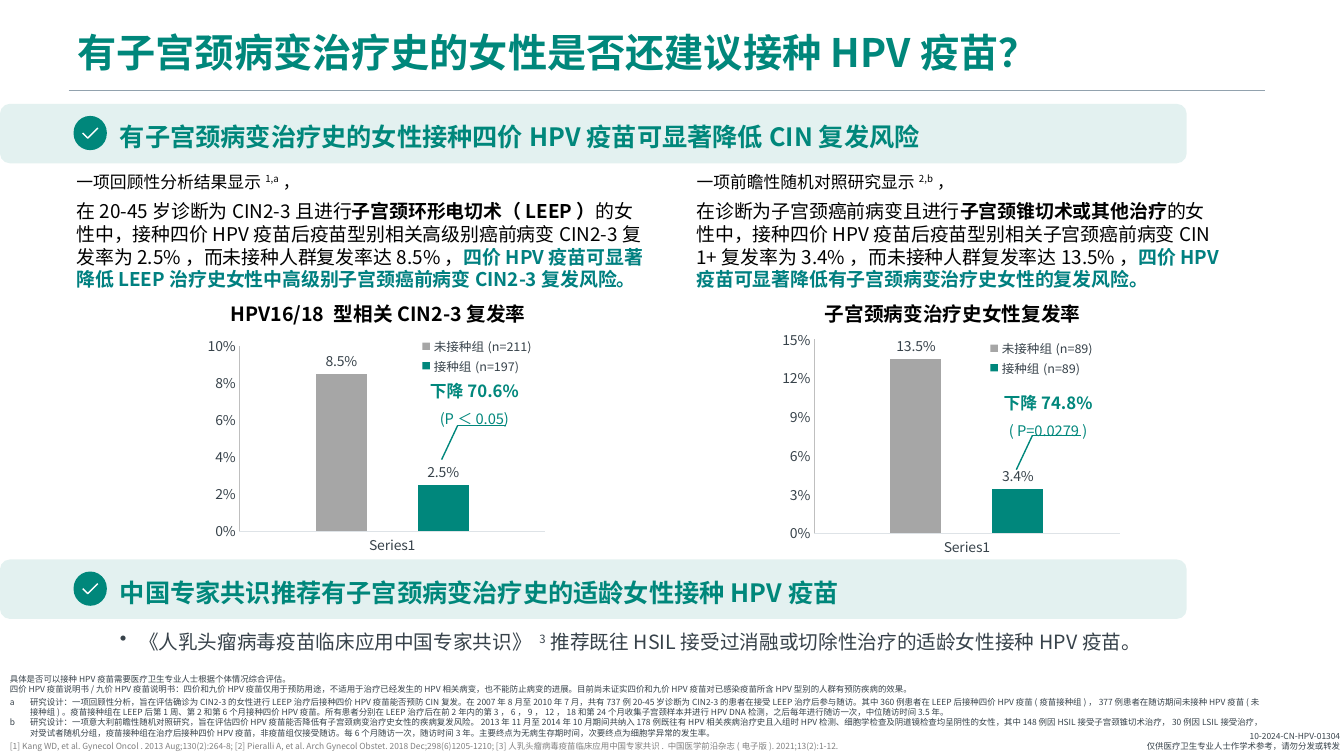
from dataclasses import dataclass

from lxml import etree
from pptx import Presentation
from pptx import util as u
from pptx.chart.data import CategoryChartData
from pptx.dml.color import RGBColor
from pptx.enum import chart as charts, shapes, text
from pptx.oxml.ns import qn


@dataclass(frozen=True)
class Theme:
    """Colours, type sizes and font of the slide."""
    font: str = "Noto Sans CJK SC"
    green: str = "00877B"
    bar_green: str = "00877C"
    teal: str = "008080"
    bar_gray: str = "A6A6A6"
    ink: str = "37424A"
    black: str = "000000"
    white: str = "FFFFFF"
    gray: str = "808080"
    rule: str = "92A2AE"
    value_line: str = "BFBFBF"
    category_line: str = "DEE3E7"
    title: float = 28
    heading: float = 18
    subheading: float = 14
    body: float = 13.5
    lead: float = 12
    detail: float = 10.5
    axis: float = 10
    legend: float = 9
    note: float = 6


class StudySlide:
    """Draws styled elements on one page."""

    def __init__(self, page, theme):
        self.page, self.theme = page, theme

    def style(self, font, size, color, bold=False):
        font.name, font.size, font.bold = self.theme.font, u.Pt(size), bold
        font.color.rgb = RGBColor.from_string(color)
        etree.SubElement(font._element, qn("a:ea"), typeface=self.theme.font)

    def box(self, left, top, width, height):
        frame = self.page.shapes.add_textbox(*map(u.Inches, (left, top, width, height))).text_frame
        frame.word_wrap = True
        return frame

    def para(self, frame, spans, size, color, bold=False, align=None, spacing=None, before=None, indent=0, bullet=None):
        para = frame.paragraphs[0]
        if para.runs:
            para = frame.add_paragraph()
        if align:
            para.alignment = align
        if spacing:
            para.line_spacing = spacing
        if before:
            para.space_before = u.Pt(before)
        if indent:
            properties = para._p.get_or_add_pPr()
            properties.set("marL", str(u.Inches(indent)))
            properties.set("indent", str(-u.Inches(indent)))
            if bullet:
                etree.SubElement(properties, qn("a:buChar"), char=bullet)
        self.style(para.font, size, color, bold)
        for words, kind in [(spans, "")] if isinstance(spans, str) else spans:
            span = para.add_run()
            span.text = words
            if kind == "raised":
                span._r.get_or_add_rPr().set("baseline", "30000")
            elif kind:
                span.font.bold = True
            if kind == "accent":
                span.font.color.rgb = RGBColor.from_string(self.theme.teal)

    def line(self, start, end, color, width):
        ends = map(u.Inches, (*start, *end))
        line = self.page.shapes.add_connector(shapes.MSO_CONNECTOR.STRAIGHT, *ends)
        line.line.color.rgb = RGBColor.from_string(color)
        line.line.width = u.Pt(width)
        etree.SubElement(line._element.spPr, qn("a:effectLst"))

    def fill(self, shape, color):
        shape.shadow.inherit = False
        shape.fill.solid()
        shape.fill.fore_color.rgb = RGBColor.from_string(color)
        shape.line.fill.background()

    def rounded(self, left, top, width, height, color):
        place = map(u.Inches, (left, top, width, height))
        shape = self.page.shapes.add_shape(shapes.MSO_SHAPE.ROUNDED_RECTANGLE, *place)
        self.fill(shape, color)
        return shape

    def banner(self, top, heading):
        theme = self.theme
        band = self.rounded(0, top, 11.77, 0.59, theme.green)
        tint = band._element.spPr.find(f"{qn('a:solidFill')}/{qn('a:srgbClr')}")
        etree.SubElement(tint, qn("a:alpha"), val="11000")
        self.rounded(0.73, top + 0.12, 0.33, 0.34, theme.green).adjustments[0] = 0.5
        points = [(u.Inches(x), u.Inches(top + y)) for x, y in ((0.97, 0.24), (0.87, 0.34), (0.82, 0.29))]
        builder = self.page.shapes.build_freeform(*points[0])
        builder.add_line_segments(points[1:], close=False)
        tick = builder.convert_to_shape()
        self.fill(tick, theme.green)
        tick.line.color.rgb = RGBColor.from_string(theme.white)
        tick.line.width = u.Pt(1)
        self.para(self.box(1.09, top + 0.08, 10.15, 0.42), heading, theme.heading, theme.green, True, spacing=u.Pt(25))

    def layout(self, parts, inner=False):
        layout = etree.Element(qn("c:layout"))
        manual = etree.SubElement(layout, qn("c:manualLayout"))
        if inner:
            etree.SubElement(manual, qn("c:layoutTarget"), val="inner")
        for name in ("xMode", "yMode"):
            etree.SubElement(manual, qn(f"c:{name}"), val="edge")
        for name, value in zip("xywh", parts):
            etree.SubElement(manual, qn(f"c:{name}"), val=str(value))
        return layout

    def chart(self, left, top, groups, maximum, step, plot_area, legend_left):
        theme = self.theme
        data = CategoryChartData(number_format="0.0%")
        data.categories = ["Series1"]
        for name, rate in groups:
            data.add_series(name, [rate])
        place = map(u.Inches, (left, top, 3.38, 2.26))
        chart = self.page.shapes.add_chart(charts.XL_CHART_TYPE.COLUMN_CLUSTERED, *place, data).chart
        chart.has_title = False
        self.style(chart.font, theme.axis, theme.ink)
        values, categories = chart.value_axis, chart.category_axis
        values.maximum_scale, values.minimum_scale, values.major_unit = maximum, 0, step
        values.has_major_gridlines = False
        values.tick_labels.number_format, values.tick_labels.number_format_is_linked = "0%", False
        for axis, color in ((values, theme.value_line), (categories, theme.category_line)):
            axis.major_tick_mark = axis.minor_tick_mark = charts.XL_TICK_MARK.NONE
            axis.format.line.color.rgb = RGBColor.from_string(color)
            axis.format.line.width = u.Pt(0.75)
        plot = chart.plots[0]
        plot.gap_width, plot.overlap, plot.vary_by_categories = 300, -100, False
        plot.has_data_labels = True
        labels = plot.data_labels
        labels.show_value, labels.position = True, charts.XL_LABEL_POSITION.OUTSIDE_END
        labels.number_format, labels.number_format_is_linked = "0.0%", False
        self.style(labels.font, theme.axis, theme.ink)
        for series, color in zip(plot.series, (theme.bar_gray, theme.bar_green)):
            series.format.fill.solid()
            series.format.fill.fore_color.rgb = RGBColor.from_string(color)
        chart.has_legend = True
        legend = chart.legend
        legend.position, legend.include_in_layout = charts.XL_LEGEND_POSITION.RIGHT, False
        self.style(legend.font, theme.legend, theme.ink)
        legend._element.find(qn("c:overlay")).addprevious(self.layout((legend_left, 0.04, 0.38, 0.19)))
        area = chart._chartSpace.chart.plotArea
        for old in area.findall(qn("c:layout")):
            area.remove(old)
        area.insert(0, self.layout(plot_area, True))

    def study(self, left, width, lead, mark, findings):
        theme = self.theme
        frame = self.box(left, 1.65, width, 1.33)
        self.para(frame, [(lead, ""), (mark, "raised"), ("，", "")], theme.lead, theme.black)
        self.para(frame, findings, theme.body, theme.black, before=6)

    def chart_title(self, left, width, words):
        self.para(self.box(left, 2.95, width, 0.33), words, self.theme.subheading, self.theme.black, True, text.PP_ALIGN.CENTER)

    def callout(self, left, top, drop, chance, tip):
        theme = self.theme
        frame = self.box(left, top, 1.21, 0.6)
        for words, size, bold in ((drop, theme.lead, True), (chance, theme.detail, False)):
            self.para(frame, words, size, theme.bar_green, bold, text.PP_ALIGN.CENTER, u.Pt(18.8))
        x, y = tip
        bend = (x + 0.16, y - 0.34)
        self.line(tip, bend, theme.bar_green, 1)
        self.line(bend, (x + 0.64, y - 0.34), theme.bar_green, 1)

    def notes(self, place, paragraphs, color, indent=0, align=None):
        frame = self.box(*place)
        for words in paragraphs:
            self.para(frame, words, self.theme.note, color, align=align, indent=indent)


def main():
    """Build and save the slide."""
    deck = Presentation()
    deck.slide_width, deck.slide_height = u.Inches(13.33), u.Inches(7.5)
    theme = Theme()
    slide = StudySlide(deck.slides.add_slide(deck.slide_layouts[6]), theme)

    slide.line((0.68, 0.89), (12.55, 0.89), theme.rule, 0.25)
    title = slide.box(0.67, 0.2, 12.66, 0.69)
    title.vertical_anchor = text.MSO_ANCHOR.MIDDLE
    slide.para(title, "有子宫颈病变治疗史的女性是否还建议接种HPV疫苗？", theme.title, theme.green, True, spacing=0.9)

    slide.banner(1.03, "有子宫颈病变治疗史的女性接种四价HPV疫苗可显著降低CIN复发风险")
    slide.study(0.66, 5.83, "一项回顾性分析结果显示", "1,a", [
        ("在20-45岁诊断为CIN2-3且进行", ""), ("子宫颈环形电切术（LEEP）", "bold"),
        ("的女性中，接种四价HPV疫苗后疫苗型别相关高级别癌前病变CIN2-3复发率为2.5%，而未接种人群复发率达8.5%，", ""),
        ("四价HPV疫苗可显著降低LEEP治疗史女性中高级别子宫颈癌前病变CIN2-3复发风险。", "accent")])
    slide.study(6.81, 5.42, "一项前瞻性随机对照研究显示", "2,b", [
        ("在诊断为子宫颈癌前病变且进行", ""), ("子宫颈锥切术或其他治疗", "bold"),
        ("的女性中，接种四价HPV疫苗后疫苗型别相关子宫颈癌前病变CIN 1+复发率为3.4%，而未接种人群复发率达13.5%，", ""),
        ("四价HPV疫苗可显著降低有子宫颈病变治疗史女性的复发风险。", "accent")])

    slide.chart(2.06, 3.24, [("未接种组(n=211)", 0.085), ("接种组(n=197)", 0.025)], 0.1, 0.02, (0.09, 0.09, 0.9, 0.85), 0.6)
    slide.chart_title(2.15, 3.2, "HPV16/18 型相关CIN2-3复发率")
    slide.callout(4.1, 3.67, "下降70.6%", "(P＜0.05)", (4.38, 4.56))
    slide.chart(7.76, 3.26, [("未接种组(n=89)", 0.135), ("接种组(n=89)", 0.034)], 0.15, 0.03, (0.09, 0.05, 0.9, 0.89), 0.57)
    slide.chart_title(8.05, 2.8, "子宫颈病变治疗史女性复发率")
    slide.callout(9.79, 3.79, "下降74.8%", "( P=0.0279 )", (10.08, 4.66))

    slide.banner(5.55, "中国专家共识推荐有子宫颈病变治疗史的适龄女性接种HPV疫苗")
    slide.para(slide.box(1.09, 6.15, 10.29, 0.36), [
        ("《人乳头瘤病毒疫苗临床应用中国专家共识》", ""), (" 3", "raised"),
        ("推荐既往HSIL接受过消融或切除性治疗的适龄女性接种HPV疫苗。", "")],
        theme.subheading, theme.ink, spacing=1.2, indent=0.19, bullet="•")

    slide.notes((0, 6.64, 12.67, 0.3), [
        "具体是否可以接种HPV疫苗需要医疗卫生专业人士根据个体情况综合评估。",
        "四价HPV疫苗说明书/九价HPV疫苗说明书：四价和九价HPV疫苗仅用于预防用途，不适用于治疗已经发生的HPV相关病变，也不能防止病变的进展。目前尚未证实四价和九价HPV疫苗对已感染疫苗所含HPV型别的人群有预防疾病的效果。"], theme.ink, 0.2)
    slide.notes((0, 6.87, 12.67, 0.5), [
        "a \t研究设计：一项回顾性分析，旨在评估确诊为CIN2-3的女性进行LEEP治疗后接种四价HPV疫苗能否预防CIN复发。在2007年8月至2010年7月，共有737例20-45岁诊断为CIN2-3的患者在接受LEEP治疗后参与随访。其中360例患者在LEEP后接种四价HPV疫苗(疫苗接种组)，377例患者在随访期间未接种HPV疫苗(未接种组)。疫苗接种组在LEEP后第1周、第2和第6个月接种四价HPV疫苗。所有患者分别在LEEP治疗后在前2年内的第3，6，9，12，18和第24个月收集子宫颈样本并进行HPV DNA检测，之后每年进行随访一次，中位随访时间3.5年。",
        "b \t研究设计：一项意大利前瞻性随机对照研究，旨在评估四价HPV疫苗能否降低有子宫颈病变治疗史女性的疾病复发风险。2013年11月至2014年10月期间共纳入178例既往有HPV相关疾病治疗史且入组时HPV检测、细胞学检查及阴道镜检查均呈阴性的女性，其中148例因HSIL接受子宫颈锥切术治疗，30例因LSIL接受治疗，对受试者随机分组，疫苗接种组在治疗后接种四价HPV疫苗，非疫苗组仅接受随访。每6个月随访一次，随访时间3年。主要终点为无病生存期时间，次要终点为细胞学异常的发生率。"], theme.ink, 0.2)
    slide.notes((0, 7.3, 8.85, 0.2), [
        "[1] Kang WD, et al. Gynecol Oncol . 2013 Aug;130(2):264-8; [2] Pieralli A, et al. Arch Gynecol Obstet. 2018 Dec;298(6)1205-1210; [3]人乳头瘤病毒疫苗临床应用中国专家共识. 中国医学前沿杂志(电子版). 2021;13(2):1-12."], theme.gray)
    slide.notes((10.16, 7.2, 3.23, 0.3), [
        "10-2024-CN-HPV-01304", "仅供医疗卫生专业人士作学术参考，请勿分发或转发"], theme.ink, align=text.PP_ALIGN.RIGHT)
    deck.save("out.pptx")


if __name__ == "__main__":
    main()
